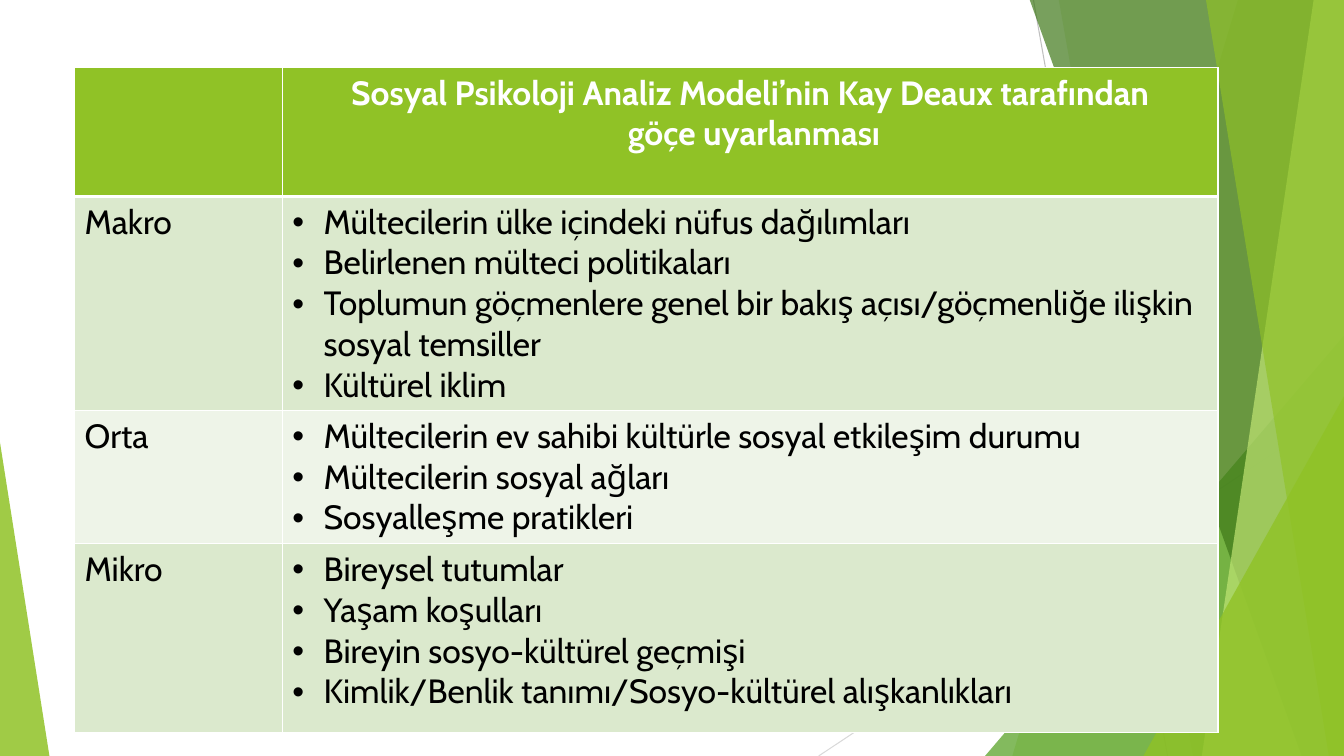
"""Build a slide with a three-level table on a faceted green backdrop."""
from lxml.etree import SubElement
from pptx import Presentation
from pptx.dml.color import RGBColor
from pptx.enum.shapes import MSO_CONNECTOR, MSO_SHAPE
from pptx.enum.text import PP_ALIGN
from pptx.oxml.ns import qn
from pptx.util import Pt

PX = 9144
WIDE, HIGH = 1333, 750
FONT = "Cabin"
WHITE = RGBColor(0xFF, 0xFF, 0xFF)
BLACK = RGBColor(0, 0, 0)
GREEN = RGBColor(0x90, 0xC2, 0x26)
LEAF = RGBColor(0x54, 0xA0, 0x21)
MOSS = RGBColor(0x3F, 0x78, 0x19)
LIME = RGBColor(0xC0, 0xE4, 0x74)
SAGE = RGBColor(0xDB, 0xE9, 0xCD)
MIST = RGBColor(0xEE, 0xF4, 0xE8)
GRAY = RGBColor(0xBF, 0xBF, 0xBF)
PALE = RGBColor(0xD9, 0xD9, 0xD9)

LINES = [((1025, 0), (1158, HIGH), GRAY), ((WIDE, 403), (812, HIGH), PALE)]
HEAD = ["Sosyal Psikoloji Analiz Modeli’nin Kay Deaux tarafından", " göçe uyarlanması"]
LEVELS = [
    ("Makro", SAGE, [
        "Mültecilerin ülke içindeki nüfus dağılımları",
        "Belirlenen mülteci politikaları",
        "Toplumun göçmenlere genel bir bakış açısı/göçmenliğe ilişkin sosyal temsiller",
        "Kültürel iklim"]),
    ("Orta", MIST, [
        "Mültecilerin ev sahibi kültürle sosyal etkileşim durumu",
        "Mültecilerin sosyal ağları",
        "Sosyalleşme pratikleri"]),
    ("Mikro", SAGE, [
        "Bireysel tutumlar",
        "Yaşam koşulları",
        "Bireyin sosyo-kültürel geçmişi",
        "Kimlik/Benlik tanımı/Sosyo-kültürel alışkanlıkları"]),
]
COLS = [206, 928]
ROWS = [128, 211, 132, 187]


def paint(shape, color, alpha):
    """Fill a shape with a partly clear colour and no outline."""
    shape.shadow.inherit = False
    shape.line.fill.background()
    shape.fill.solid()
    shape.fill.fore_color.rgb = color
    tint = shape.fill._xPr.find(qn("a:solidFill"))[0]
    SubElement(tint, qn("a:alpha"), val=str(alpha * 1000))


def add_line(slide, start, end, color):
    """Draw a thin straight line."""
    line = slide.shapes.add_connector(
        MSO_CONNECTOR.STRAIGHT, *(n * PX for n in start + end))
    line.line.color.rgb = color
    line.line.width = Pt(0.75)
    SubElement(line._element.spPr, qn("a:effectLst"))


def add_facet(slide, top, foot, color, alpha):
    """Draw a facet from a slanted left side to the right slide edge."""
    pen = slide.shapes.build_freeform(top, -1, scale=PX)
    pen.add_line_segments([(WIDE, -1), (WIDE, HIGH), (foot, HIGH)], close=True)
    paint(pen.convert_to_shape(), color, alpha)


def add_wedge(slide, left, top, width, peak, color, alpha):
    """Draw a triangle that stands on the bottom slide edge."""
    wedge = slide.shapes.add_shape(
        MSO_SHAPE.ISOSCELES_TRIANGLE,
        left * PX, top * PX, width * PX, (HIGH - top) * PX)
    wedge.adjustments[0] = peak
    paint(wedge, color, alpha)


def write(frame, texts, color=BLACK, bold=False, align=PP_ALIGN.LEFT, bullet=False):
    """Write one formatted paragraph per text."""
    for i, text in enumerate(texts):
        para = frame.paragraphs[0] if i == 0 else frame.add_paragraph()
        para.alignment = align
        run = para.add_run()
        run.text = text
        run.font.name = FONT
        run.font.size = Pt(24)
        run.font.bold = bold
        run.font.color.rgb = color
        if bullet:
            props = para._p.get_or_add_pPr()
            props.set("marL", str(31 * PX))
            props.set("indent", str(-31 * PX))
            SubElement(props, qn("a:buFont"), typeface="Arial")
            SubElement(props, qn("a:buChar"), char="•")


def style(cell, color, top=1, foot=1):
    """Give a cell white borders and a fill."""
    props = cell._tc.get_or_add_tcPr()
    for side, width in zip("LRTB", (1, 1, top, foot)):
        edge = SubElement(props, qn(f"a:ln{side}"), w=str(Pt(width)))
        fill = SubElement(edge, qn("a:solidFill"))
        SubElement(fill, qn("a:srgbClr"), val=str(WHITE))
    cell.fill.solid()
    cell.fill.fore_color.rgb = color


def add_grid(slide):
    """Add the table of levels."""
    grid = slide.shapes.add_table(
        len(ROWS), len(COLS), 74 * PX, 67 * PX, sum(COLS) * PX, sum(ROWS) * PX).table
    for col, width in zip(grid.columns, COLS):
        col.width = width * PX
    for row, height in zip(grid.rows, ROWS):
        row.height = height * PX
    for cell in grid.rows[0].cells:
        style(cell, GREEN, foot=3)
    write(grid.cell(0, 1).text_frame, HEAD, color=WHITE, bold=True, align=PP_ALIGN.CENTER)
    for i, (name, color, points) in enumerate(LEVELS, 1):
        for cell in grid.rows[i].cells:
            style(cell, color, top=3 if i == 1 else 1)
        write(grid.cell(i, 0).text_frame, [name])
        write(grid.cell(i, 1).text_frame, points, bullet=True)


def main():
    """Build and save the slide."""
    deck = Presentation()
    deck.slide_width, deck.slide_height = WIDE * PX, HIGH * PX
    slide = deck.slides.add_slide(deck.slide_layouts[6])
    for start, end, color in LINES:
        add_line(slide, start, end, color)
    add_facet(slide, 1228, 1004, GREEN, 30)
    add_facet(slide, 1050, 1183, GREEN, 20)
    add_wedge(slide, 977, 333, 356, 1, LEAF, 72)
    add_facet(slide, 1021, 1291, MOSS, 70)
    add_facet(slide, 1303, 1192, LIME, 70)
    add_facet(slide, 1196, 1318, GREEN, 65)
    add_wedge(slide, 1134, 393, 199, 1, GREEN, 80)
    add_wedge(slide, 0, 439, 49, 0, GREEN, 85)
    add_grid(slide)
    deck.save("out.pptx")


if __name__ == "__main__":
    main()
